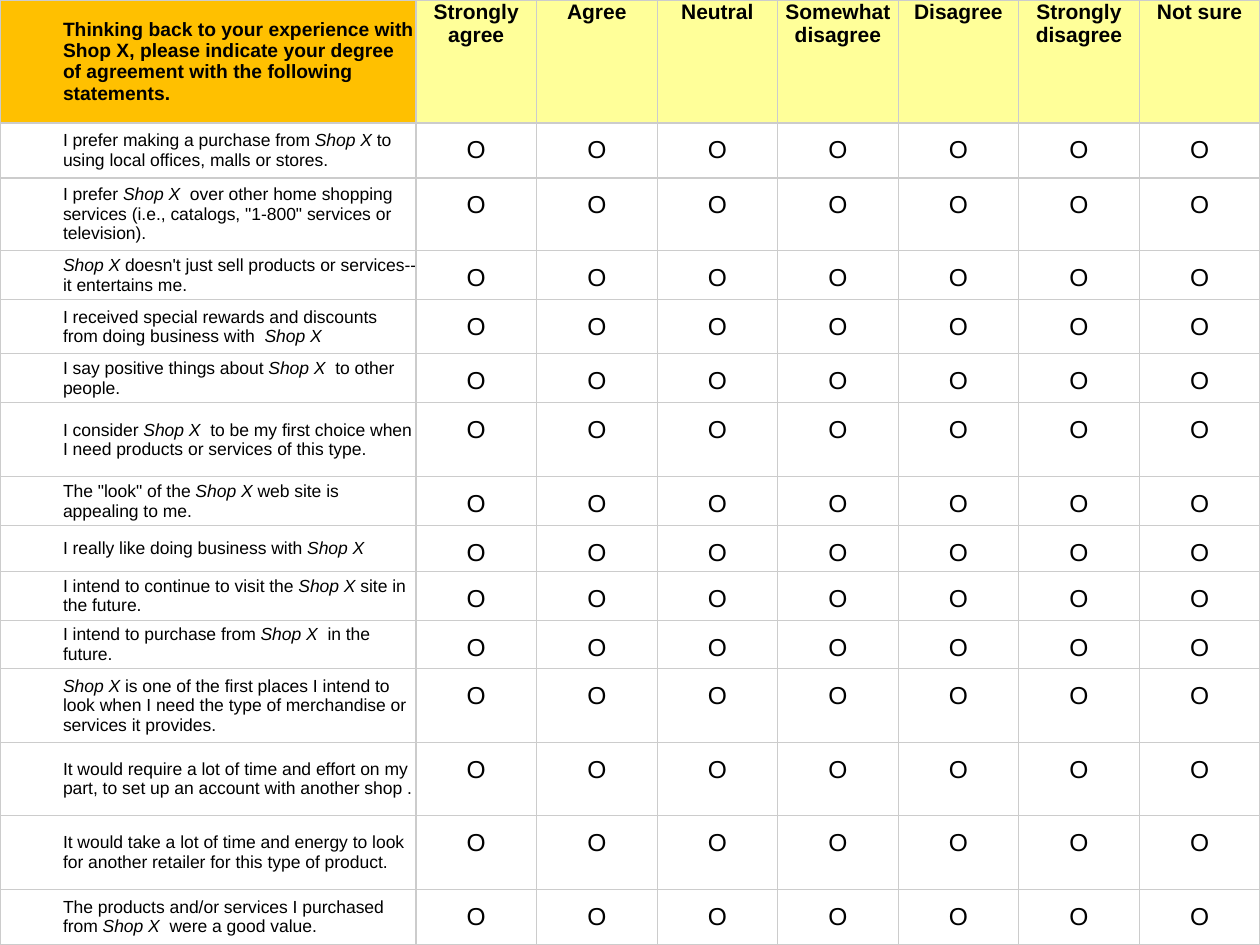
"""Build a one-slide survey grid that rates agreement with statements on Shop X."""
from lxml.etree import SubElement
from pptx import Presentation
from pptx.dml.color import RGBColor
from pptx.enum.text import MSO_ANCHOR, PP_ALIGN
from pptx.oxml.ns import qn
from pptx.util import Pt

PX = 7257.14
WIDTH, HEIGHT = 1260, 945
STATEMENT_W, INDENT = 416, 63
FONT = "Arial"
BLACK = RGBColor(0x00, 0x00, 0x00)
WHITE = RGBColor(0xFF, 0xFF, 0xFF)
ORANGE = RGBColor(0xFF, 0xC0, 0x00)
YELLOW = RGBColor(0xFF, 0xFF, 0x99)
GREY = RGBColor(0xCC, 0xCC, 0xCC)

QUESTION = ("Thinking back to your experience with Shop X, please indicate your "
            "degree of agreement with the following statements.")
RATINGS = ["Strongly agree", "Agree", "Neutral", "Somewhat disagree",
           "Disagree", "Strongly disagree", "Not sure"]
MARK = "Ο"
HEADER_H = 123
STATEMENTS = [
    (55, "I prefer making a purchase from *Shop X *to using local offices, malls or stores."),
    (73, "I prefer *Shop X  *over other home shopping services "
         "(i.e., catalogs, \"1-800\" services or television)."),
    (49, "*Shop X *doesn't just sell products or services--it entertains me."),
    (54, "I received special rewards and discounts from doing business with * Shop X*"),
    (49, "I say positive things about *Shop X  *to other people."),
    (74, "I consider *Shop X  *to be my first choice when I need products "
         "or services of this type."),
    (49, "The \"look\" of the *Shop X *web site is appealing to me."),
    (46, "I really like doing business with *Shop X*"),
    (49, "I intend to continue to visit the *Shop X *site in the future."),
    (48, "I intend to purchase from *Shop X  *in the future."),
    (74, "*Shop X *is one of the first places I intend to look when I need "
         "the type of merchandise or services it provides."),
    (73, "It would require a lot of time and effort on my part, "
         "to set up an account with another shop ."),
    (74, "It would take a lot of time and energy to look for another retailer "
         "for this type of product."),
    (55, "The products and/or services I purchased from *Shop X  *were a good value."),
]


def px(n):
    return round(n * PX)


def add_borders(cell):
    tc_pr = cell._tc.get_or_add_tcPr()
    for side in ("lnL", "lnR", "lnT", "lnB"):
        ln = SubElement(tc_pr, qn(f"a:{side}"), w=str(Pt(0.75)))
        SubElement(SubElement(ln, qn("a:solidFill")), qn("a:srgbClr"), val=str(GREY))


def fill_cell(cell, text, size, fill, bold=False):
    """Format a cell, with text between asterisks in italics, and return its paragraph."""
    add_borders(cell)
    cell.fill.solid()
    cell.fill.fore_color.rgb = fill
    cell.margin_left = cell.margin_right = cell.margin_top = cell.margin_bottom = 0
    p = cell.text_frame.paragraphs[0]
    p.font.name, p.font.size, p.font.bold = FONT, Pt(size), bold
    p.font.color.rgb = BLACK
    for i, part in enumerate(text.split("*")):
        if part:
            r = p.add_run()
            r.text = part
            r.font.name, r.font.size, r.font.bold = FONT, Pt(size), bold
            r.font.italic = i % 2 == 1
            r.font.color.rgb = BLACK
    return p


def fill_statement(cell, *args, **kwargs):
    p = fill_cell(cell, *args, **kwargs)
    cell.vertical_anchor = MSO_ANCHOR.MIDDLE
    p.level = 1
    p_pr = p._p.get_or_add_pPr()
    p_pr.set("marL", str(px(INDENT)))
    p_pr.set("indent", "0")
    return p


def main():
    prs = Presentation()
    prs.slide_width, prs.slide_height = px(WIDTH), px(HEIGHT)
    s = prs.slides.add_slide(prs.slide_layouts[6])
    table = s.shapes.add_table(len(STATEMENTS) + 1, len(RATINGS) + 1,
                               0, 0, px(WIDTH), px(HEIGHT)).table
    table.first_row = table.horz_banding = False

    rating_w = (WIDTH - STATEMENT_W) / len(RATINGS)
    for col, w in zip(table.columns, [STATEMENT_W] + [rating_w] * len(RATINGS)):
        col.width = px(w)
    for row, h in zip(table.rows, [HEADER_H] + [h for h, _ in STATEMENTS]):
        row.height = px(h)

    p = fill_statement(table.cell(0, 0), QUESTION, 11, ORANGE, bold=True)
    p.space_after = Pt(12)
    for c, rating in enumerate(RATINGS, 1):
        p = fill_cell(table.cell(0, c), rating, 12, YELLOW, bold=True)
        p.alignment = PP_ALIGN.CENTER

    for r, (_, statement) in enumerate(STATEMENTS, 1):
        p = fill_statement(table.cell(r, 0), statement, 10, WHITE)
        p.space_before = p.space_after = Pt(3)
        for c in range(1, len(RATINGS) + 1):
            p = fill_cell(table.cell(r, c), MARK, 14, WHITE)
            p.alignment = PP_ALIGN.CENTER
            p.line_spacing = 1.5
            p.space_before = Pt(6)

    prs.save("out.pptx")


if __name__ == "__main__":
    main()
